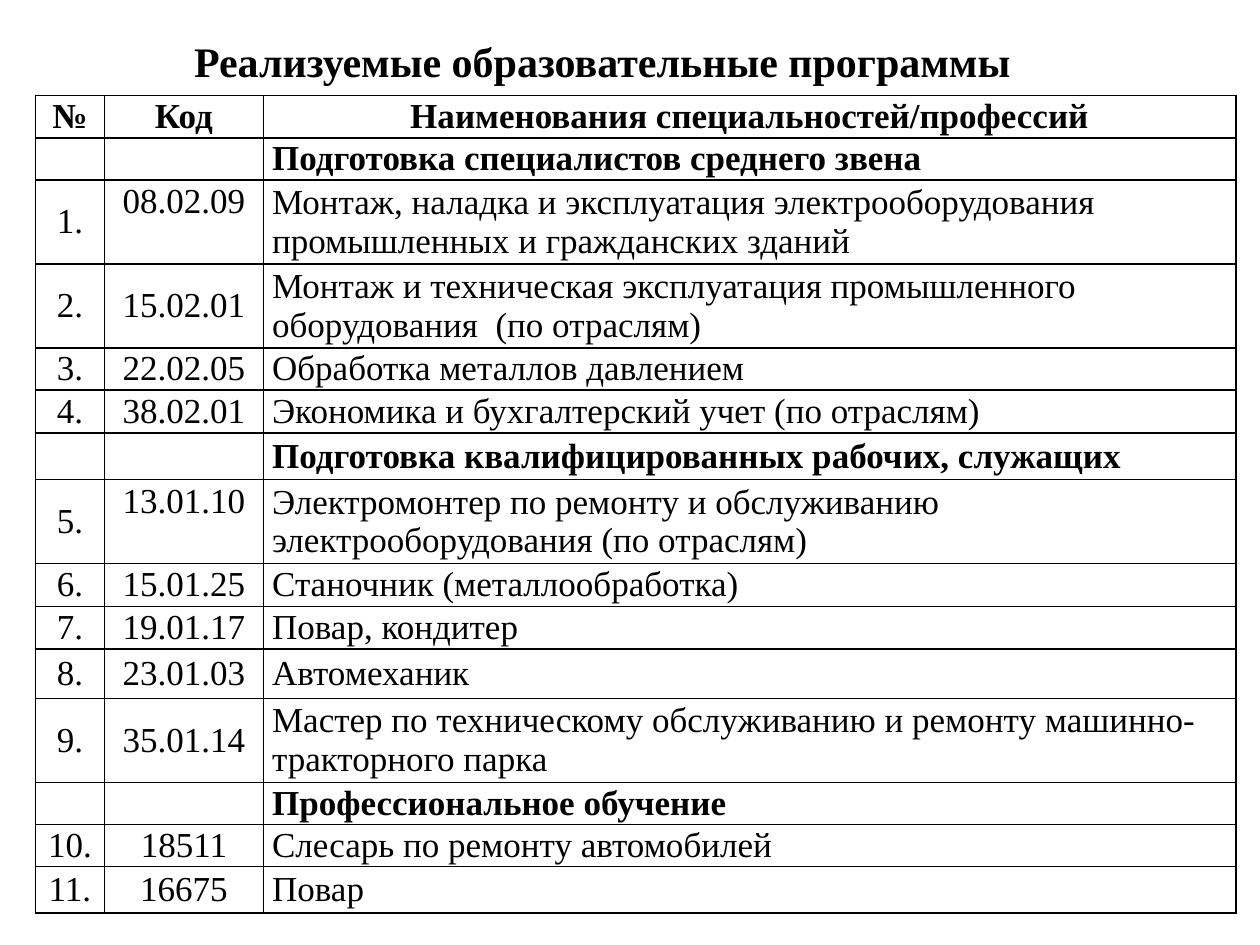
from pptx import Presentation
from pptx.dml.color import RGBColor
from pptx.enum.text import MSO_ANCHOR, PP_ALIGN
from pptx.oxml import parse_xml
from pptx.oxml.ns import nsdecls
from pptx.util import Inches, Pt


def style(p, size, bold, align):
    p.alignment = align
    for r in p.runs:
        r.font.name = "Times New Roman"
        r.font.size = Pt(size)
        r.font.bold = bold
        r.font.color.rgb = RGBColor.from_string("000000")


def add_borders(cell, color, width):
    tc_pr = cell._tc.get_or_add_tcPr()
    for i, side in enumerate(("lnL", "lnR", "lnT", "lnB")):
        tc_pr.insert(i, parse_xml(
            f'<a:{side} {nsdecls("a")} w="{Pt(width)}"><a:solidFill>'
            f'<a:srgbClr val="{color}"/></a:solidFill></a:{side}>'))


prs = Presentation()
prs.slide_width, prs.slide_height = Inches(10), Inches(7.5)
s = prs.slides.add_slide(prs.slide_layouts[6])

tf = s.shapes.add_textbox(Inches(0.28), Inches(0.13), Inches(9), Inches(0.71)).text_frame
tf.word_wrap = True
tf.vertical_anchor = MSO_ANCHOR.MIDDLE
tf.text = "Реализуемые образовательные программы"
style(tf.paragraphs[0], 24, True, PP_ALIGN.CENTER)

programs = [
    (0.33, "Код", "Наименования специальностей/профессий"),
    (0.33, "", "Подготовка специалистов среднего звена"),
    (0.66, "08.02.09", "Монтаж, наладка и эксплуатация электрооборудования промышленных и гражданских зданий"),
    (0.66, "15.02.01", "Монтаж и техническая эксплуатация промышленного оборудования  (по отраслям)"),
    (0.33, "22.02.05", "Обработка металлов давлением"),
    (0.34, "38.02.01", "Экономика и бухгалтерский учет (по отраслям)"),
    (0.37, "", "Подготовка квалифицированных рабочих, служащих"),
    (0.66, "13.01.10", "Электромонтер по ремонту и обслуживанию электрооборудования (по отраслям)"),
    (0.34, "15.01.25", "Станочник (металлообработка)"),
    (0.34, "19.01.17", "Повар, кондитер"),
    (0.39, "23.01.03", "Автомеханик"),
    (0.66, "35.01.14", "Мастер по техническому обслуживанию и ремонту машинно-тракторного парка"),
    (0.33, "", "Профессиональное обучение"),
    (0.33, "18511", "Слесарь по ремонту автомобилей"),
    (0.37, "16675", "Повар"),
]
top_codes = ("08.02.09", "13.01.10")

table = s.shapes.add_table(len(programs), 3, Inches(0.28), Inches(0.76),
                           Inches(9.53), Inches(6.44)).table
table.first_row = table.horz_banding = False
for col, width in zip(table.columns, (0.55, 1.26, 7.72)):
    col.width = Inches(width)

number = 0
for i, (height, code, name) in enumerate(programs):
    table.rows[i].height = Inches(height)
    header = i == 0
    label = "№" if header else ""
    if code and not header:
        number += 1
        label = f"{number}."
    for j, text in enumerate((label, code, name)):
        cell = table.cell(i, j)
        cell.fill.background()
        add_borders(cell, "000000", 1)
        cell.margin_left = cell.margin_right = Inches(0.07)
        cell.margin_top = cell.margin_bottom = 0
        cell.vertical_anchor = MSO_ANCHOR.MIDDLE
        if text in top_codes:
            cell.vertical_anchor = MSO_ANCHOR.TOP
            cell.margin_top = Inches(0.02)
        cell.text_frame.text = text
        align = PP_ALIGN.CENTER if header or j < 2 else PP_ALIGN.LEFT
        style(cell.text_frame.paragraphs[0], 20, header or not code, align)

prs.save("out.pptx")
